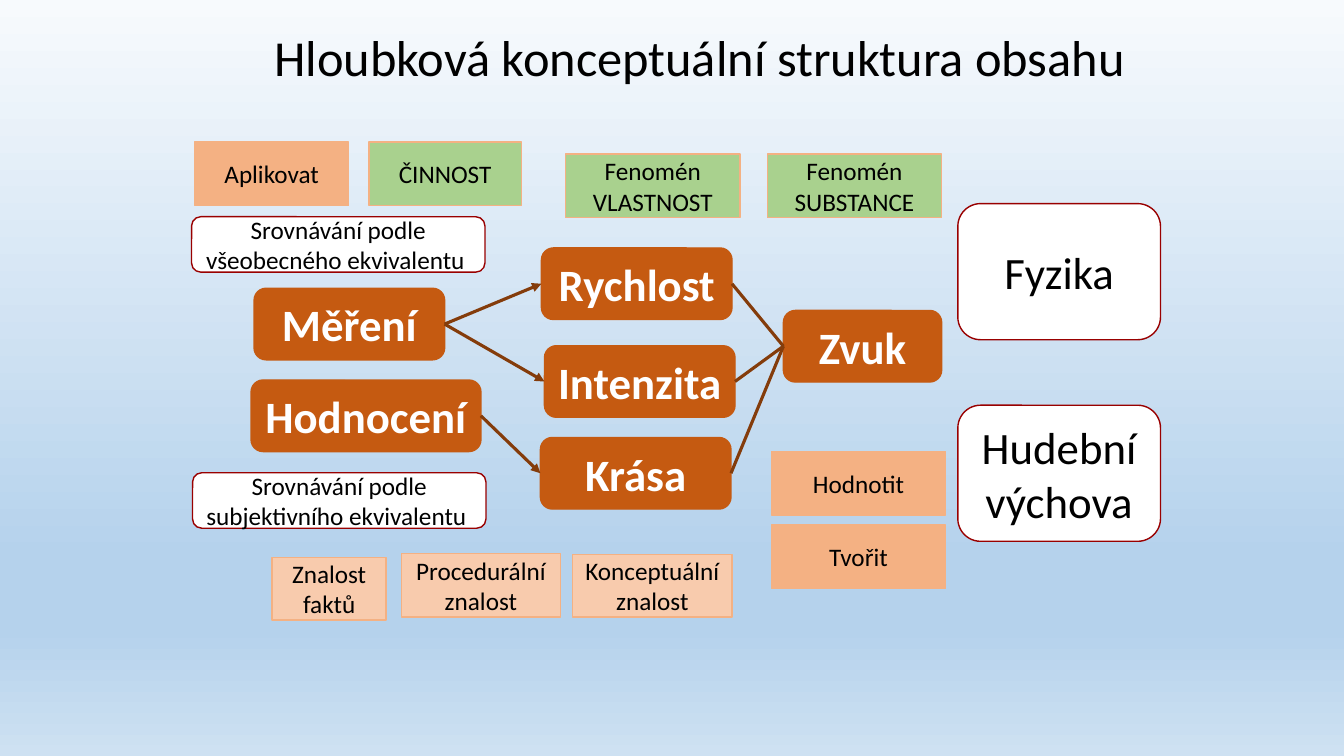
from dataclasses import dataclass

from lxml.etree import SubElement
from pptx import Presentation
from pptx.dml.color import RGBColor
from pptx.enum.shapes import MSO_CONNECTOR, MSO_SHAPE
from pptx.enum.text import MSO_ANCHOR, PP_ALIGN
from pptx.oxml.ns import qn
from pptx.shapes.autoshape import Shape
from pptx.slide import Slide
from pptx.text.text import _Paragraph
from pptx.util import Emu, Pt

PX_PER_INCH = 100
FONT = "Calibri"
BLACK = "000000"
WHITE = "FFFFFF"


@dataclass(frozen=True)
class Style:
    geometry: MSO_SHAPE
    fill: str
    line: str
    size: int
    color: str = BLACK
    bold: bool = False


@dataclass(frozen=True)
class Box:
    text: str
    style: Style
    x: int
    y: int
    w: int
    h: int


@dataclass(frozen=True)
class Link:
    start: str
    end: str
    arrow: bool


CONCEPT = Style(MSO_SHAPE.ROUNDED_RECTANGLE, "C55A11", "C55A11", 32, WHITE, True)
SUBJECT = Style(MSO_SHAPE.ROUNDED_RECTANGLE, WHITE, "990000", 32)
COMPARISON = Style(MSO_SHAPE.ROUNDED_RECTANGLE, WHITE, "990000", 18)
PROCESS = Style(MSO_SHAPE.RECTANGLE, "F4B183", "F4B183", 18)
KNOWLEDGE = Style(MSO_SHAPE.RECTANGLE, "F8CBAD", "F4B183", 18)
CATEGORY = Style(MSO_SHAPE.RECTANGLE, "A9D18E", "F4B183", 18)

BOXES = [
    Box("Zvuk", CONCEPT, 777, 308, 157, 71),
    Box("Rychlost", CONCEPT, 537, 246, 189, 71),
    Box("Měření", CONCEPT, 252, 286, 189, 71),
    Box("Intenzita", CONCEPT, 540, 343, 189, 71),
    Box("Krása", CONCEPT, 536, 434, 189, 71),
    Box("Hodnocení", CONCEPT, 249, 377, 228, 71),
    Box("Fyzika", SUBJECT, 950, 202, 201, 135),
    Box("Hudební výchova", SUBJECT, 950, 402, 201, 135),
    Box("Srovnávání podle všeobecného ekvivalentu ", COMPARISON, 190, 215, 291, 55),
    Box("Srovnávání podle subjektivního ekvivalentu ", COMPARISON, 191, 469, 291, 55),
    Box("Aplikovat", PROCESS, 193, 141, 153, 63),
    Box("Hodnotit", PROCESS, 765, 448, 173, 63),
    Box("Tvořit", PROCESS, 765, 521, 173, 63),
    Box("Znalost\nfaktů", KNOWLEDGE, 270, 553, 113, 62),
    Box("Procedurální znalost", KNOWLEDGE, 398, 549, 158, 63),
    Box("Konceptuální znalost", KNOWLEDGE, 568, 550, 158, 62),
    Box("ČINNOST", CATEGORY, 366, 141, 151, 63),
    Box("Fenomén\nVLASTNOST", CATEGORY, 561, 153, 173, 63),
    Box("Fenomén\nSUBSTANCE", CATEGORY, 761, 153, 173, 63),
]

LINKS = [
    Link("Rychlost", "Zvuk", False),
    Link("Intenzita", "Zvuk", False),
    Link("Krása", "Zvuk", False),
    Link("Měření", "Rychlost", True),
    Link("Měření", "Intenzita", True),
    Link("Hodnocení", "Krása", True),
]

BACKGROUND = [(0, "F7FAFD"), (74, "B5D2EC"), (83, "B5D2EC"), (100, "CEE1F2")]


def px(n: int) -> Emu:
    return Emu(n * 914400 // PX_PER_INCH)


def rgb(value: str) -> RGBColor:
    return RGBColor.from_string(value)


def set_font(p: _Paragraph, size: int, color: str, bold: bool = False) -> None:
    p.font.name = FONT
    p.font.size = Pt(size)
    p.font.bold = bold
    p.font.color.rgb = rgb(color)


def paint_background(s: Slide) -> None:
    fill = s.background.fill
    fill.gradient()
    fill.gradient_angle = 270
    stops = s.element.find(".//" + qn("a:gsLst"))
    for stop in list(stops):
        stops.remove(stop)
    for percent, color in BACKGROUND:
        stop = SubElement(stops, qn("a:gs"), pos=str(percent * 1000))
        SubElement(stop, qn("a:srgbClr"), val=color)


def add_title(s: Slide, text: str) -> None:
    tf = s.shapes.add_textbox(px(226), px(28), px(900), px(90)).text_frame
    tf.word_wrap = True
    p = tf.paragraphs[0]
    p.text = text
    p.alignment = PP_ALIGN.RIGHT
    p.line_spacing = 0.9
    set_font(p, 36, BLACK)


def add_box(s: Slide, box: Box) -> Shape:
    style = box.style
    sp = s.shapes.add_shape(style.geometry, px(box.x), px(box.y), px(box.w), px(box.h))
    sp.shadow.inherit = False
    sp.fill.solid()
    sp.fill.fore_color.rgb = rgb(style.fill)
    sp.line.color.rgb = rgb(style.line)
    sp.line.width = Pt(1)
    tf = sp.text_frame
    tf.word_wrap = True
    tf.vertical_anchor = MSO_ANCHOR.MIDDLE
    tf.text = box.text
    for p in tf.paragraphs:
        p.alignment = PP_ALIGN.CENTER
        set_font(p, style.size, style.color, style.bold)
    return sp


def add_link(s: Slide, start: Shape, end: Shape, arrow: bool) -> None:
    cxn = s.shapes.add_connector(MSO_CONNECTOR.STRAIGHT, 0, 0, 0, 0)
    cxn.begin_connect(start, 3)
    cxn.end_connect(end, 1)
    cxn.line.color.rgb = rgb("843C0B")
    cxn.line.width = Pt(2.25)
    if arrow:
        SubElement(cxn.line._get_or_add_ln(), qn("a:tailEnd"), type="triangle")
    SubElement(cxn.element.spPr, qn("a:effectLst"))


def main() -> None:
    prs = Presentation()
    prs.slide_width, prs.slide_height = px(1333), px(750)
    s = prs.slides.add_slide(prs.slide_layouts[6])
    paint_background(s)
    add_title(s, "Hloubková konceptuální struktura obsahu")
    shapes = {box.text: add_box(s, box) for box in BOXES}
    for link in LINKS:
        add_link(s, shapes[link.start], shapes[link.end], link.arrow)
    prs.save("out.pptx")


if __name__ == "__main__":
    main()
